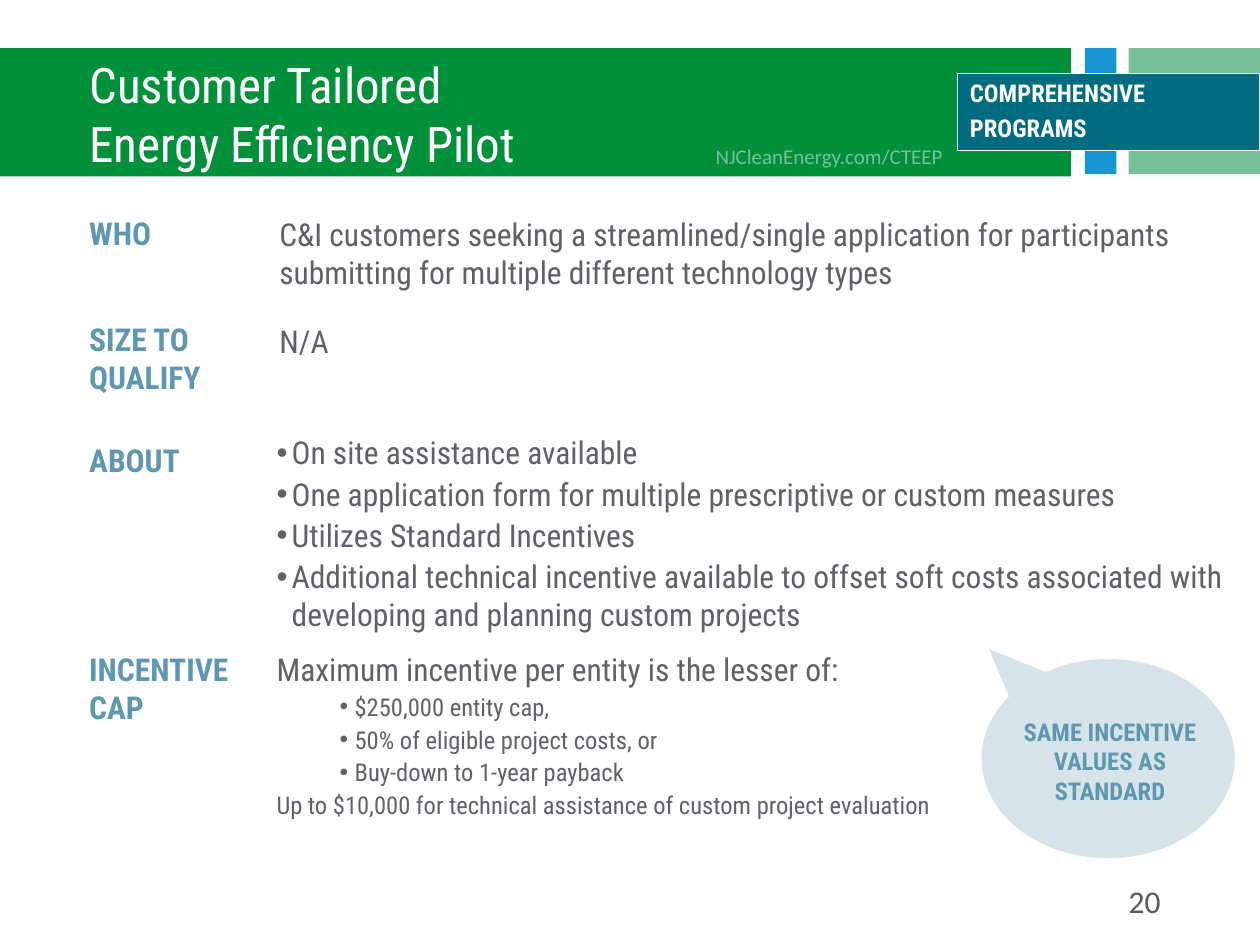
from dataclasses import dataclass
from typing import Optional

from lxml.etree import SubElement
from pptx import Presentation
from pptx.dml.color import RGBColor
from pptx.enum.shapes import MSO_SHAPE
from pptx.enum.text import MSO_ANCHOR, MSO_AUTO_SIZE, PP_ALIGN
from pptx.oxml.ns import qn
from pptx.util import Pt

HUES = {
    "white": "FFFFFF", "blue": "1894D2", "mint": "77C19A", "green": "029035",
    "leaf": "02903A", "teal": "006C82", "steel": "5E97AF", "grey": "5E6167",
    "page": "595959",
}
FACE = "Roboto Condensed"
LEFT = 43.9


@dataclass
class Box:
    x: float
    y: float
    w: float
    h: float


@dataclass
class Style:
    hue: str
    size: float = 18
    bold: bool = False
    face: str = FACE
    align: PP_ALIGN = PP_ALIGN.LEFT
    after: float = 0
    lead: float = 1


@dataclass
class Line:
    text: str
    style: Style
    dent: Optional[float] = None
    level: int = 0


@dataclass
class Bar:
    box: Box
    hue: str


def tint(name: str) -> RGBColor:
    return RGBColor.from_string(HUES[name])


def place(shape, box: Box) -> None:
    shape.left, shape.top = Pt(box.x), Pt(box.y)
    shape.width, shape.height = Pt(box.w), Pt(box.h)


def mark(para, dent: Optional[float]) -> None:
    props = para._p.get_or_add_pPr()
    hang = 0 if dent is None else -8.64
    props.set("marL", str(Pt(dent or 0)))
    props.set("indent", str(Pt(hang)))
    if dent is None:
        SubElement(props, qn("a:buNone"))
    else:
        SubElement(props, qn("a:buFont")).set("typeface", "Arial")
        SubElement(props, qn("a:buChar")).set("char", "•")


def write(frame, lines: list[Line], grow: bool = True) -> None:
    frame.word_wrap = True
    frame.auto_size = MSO_AUTO_SIZE.SHAPE_TO_FIT_TEXT if grow else MSO_AUTO_SIZE.NONE
    for spot, line in enumerate(lines):
        para = frame.add_paragraph() if spot else frame.paragraphs[0]
        style = line.style
        para.level = line.level
        mark(para, line.dent)
        para.alignment = style.align
        para.space_before = Pt(0)
        para.space_after = Pt(style.after)
        para.line_spacing = style.lead
        run = para.add_run()
        run.text = line.text
        run.font.name = style.face
        run.font.size = Pt(style.size)
        run.font.bold = style.bold
        run.font.color.rgb = tint(style.hue)


def label(slide, box: Box, text: str, style: Style) -> None:
    shape = slide.shapes.add_textbox(0, 0, 0, 0)
    place(shape, box)
    write(shape.text_frame, [Line(text, style)])


def fill(holder, tree, box: Box, lines: list[Line]) -> None:
    place(holder, box)
    holder.text_frame.vertical_anchor = MSO_ANCHOR.TOP
    write(holder.text_frame, lines)
    tree.append(holder.element)


def block(slide, kind: MSO_SHAPE, bar: Bar):
    shape = slide.shapes.add_shape(kind, 0, 0, 0, 0)
    place(shape, bar.box)
    shape.shadow.inherit = False
    shape.fill.solid()
    shape.fill.fore_color.rgb = tint(bar.hue)
    shape.line.fill.background()
    return shape


HEAD = Style("steel", bold=True)
TEXT = Style("grey", after=2)
SMALL = Style("grey", 14, after=2)
TITLE = Style("white", 28)
BADGE = Style("white", 14, True, after=5, lead=0.9)
NOTE = Style("steel", 14, True, align=PP_ALIGN.CENTER)
LINK = Style("mint", 12, face="Calibri")
PAGE = Style("page", face="Calibri", align=PP_ALIGN.RIGHT)

BARS = [
    Bar(Box(619.9, 27.5, 18, 72), "blue"),
    Bar(Box(645, 27.5, 75, 72), "mint"),
    Bar(Box(-0.5, 27.5, 612.5, 72), "green"),
    Bar(Box(-0.5, 28.8, 612.5, 72), "leaf"),
]
HEADS = [
    (Box(LEFT, 119, 108.7, 29.1), "WHO"),
    (Box(LEFT, 179.3, 108.7, 50.9), "SIZE TO QUALIFY"),
    (Box(LEFT, 248.4, 108.7, 29.1), "ABOUT"),
    (Box(LEFT, 368, 122.4, 50.9), "INCENTIVE CAP"),
]
FACTS = [
    (Box(152.6, 119.6, 542.9, 50.9),
     "C&I customers seeking a streamlined/single application for participants "
     "submitting for multiple different technology types"),
    (Box(152.6, 180.7, 542.9, 29.1), "N/A"),
]
ABOUT = [
    "On site assistance available",
    "One application form for multiple prescriptive or custom measures",
    "Utilizes Standard Incentives",
    "Additional technical incentive available to offset soft costs associated "
    "with developing and planning custom projects",
]
CAPS = [
    "$250,000 entity cap,",
    "50% of eligible project costs, or",
    "Buy-down to 1-year payback",
]


def main() -> None:
    deck = Presentation()
    deck.slide_width, deck.slide_height = Pt(720), Pt(540)
    slide = deck.slides.add_slide(deck.slide_layouts[3])
    tree = slide.shapes.element
    title, about, caps = slide.placeholders

    for bar in BARS:
        block(slide, MSO_SHAPE.RECTANGLE, bar)
    label(slide, Box(508.3, 500.4, 162, 28.8), "20", PAGE)
    label(slide, Box(401.8, 78.5, 290.9, 21.8), "NJCleanEnergy.com/CTEEP", LINK)
    fill(title, tree, Box(LEFT, 27.5, 329, 75), [
        Line("Customer Tailored", TITLE),
        Line("Energy Efficiency Pilot", TITLE),
    ])
    for box, text in HEADS:
        label(slide, box, text, HEAD)
    for box, text in FACTS:
        label(slide, box, text, TEXT)
    fill(about, tree, Box(150.8, 244.1, 569.2, 122.4),
         [Line(text, TEXT, 8.64) for text in ABOUT])
    fill(caps, tree, Box(150.8, 368, 482.4, 105.1), [
        Line("Maximum incentive per entity is the lesser of:", TEXT),
        *[Line(text, SMALL, 44.64, 1) for text in CAPS],
        Line("Up to $10,000 for technical assistance of custom project evaluation",
             SMALL),
    ])

    badge = block(slide, MSO_SHAPE.RECTANGLE, Bar(Box(547.2, 42, 172.8, 44), "teal"))
    badge.line.color.rgb = tint("white")
    badge.line.width = Pt(1)
    frame = badge.text_frame
    frame.margin_top = frame.margin_bottom = Pt(4.3)
    frame.vertical_anchor = MSO_ANCHOR.MIDDLE
    write(frame, [Line(word, BADGE) for word in ("COMPREHENSIVE", "PROGRAMS")], False)

    cloud = block(slide, MSO_SHAPE.OVAL_CALLOUT,
                  Bar(Box(560.9, 376.6, 144.7, 113.8), "steel"))
    cloud.adjustments[0], cloud.adjustments[1] = -0.47, -0.55
    shade = cloud.element.spPr.find(".//" + qn("a:srgbClr"))
    SubElement(shade, qn("a:alpha")).set("val", "25000")
    label(slide, Box(562.3, 406.1, 144, 58.3),
          "SAME INCENTIVE VALUES AS STANDARD", NOTE)

    deck.save("out.pptx")


if __name__ == "__main__":
    main()
